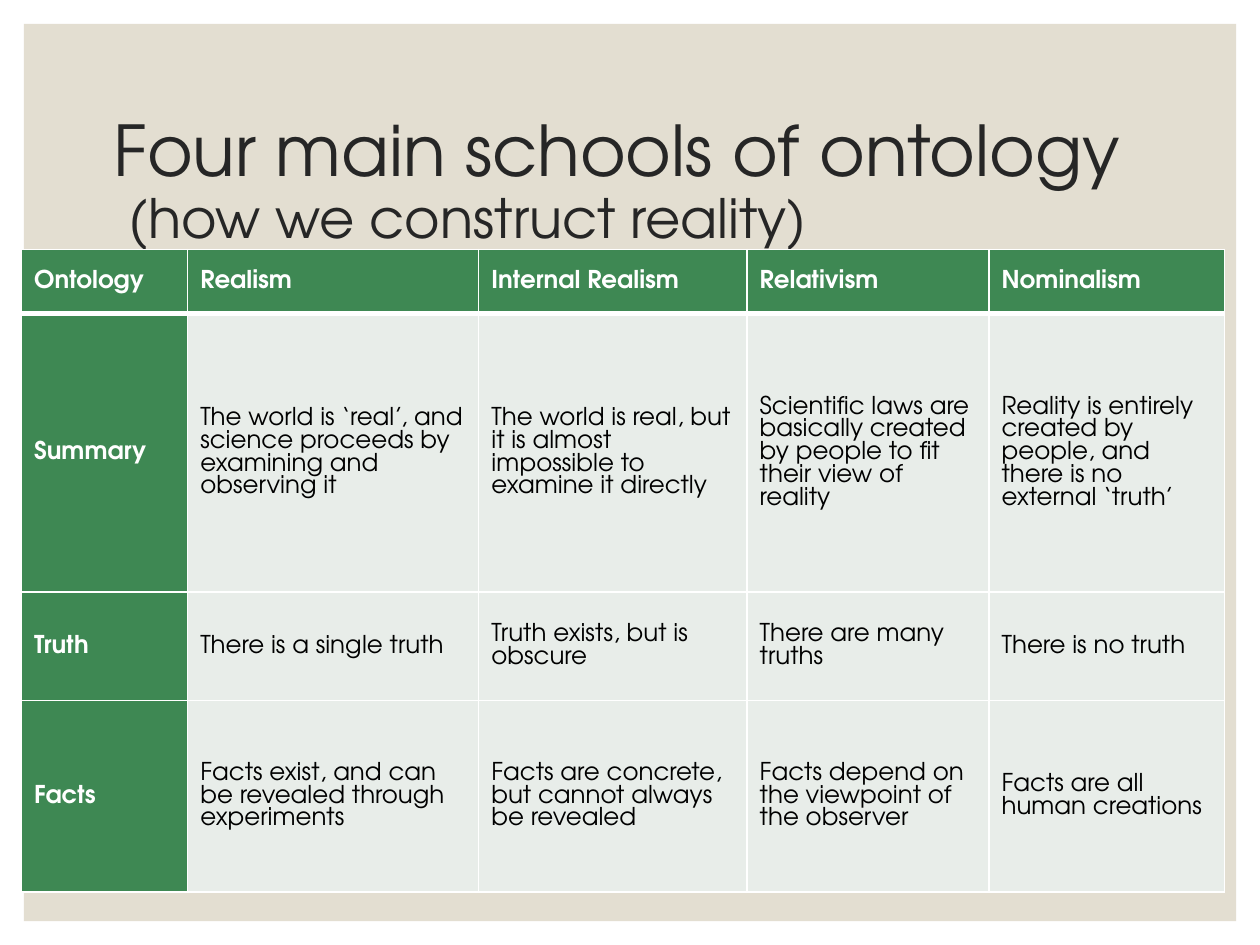
from lxml import etree
from pptx import Presentation
from pptx.dml.color import RGBColor
from pptx.enum.shapes import MSO_SHAPE
from pptx.enum.text import MSO_ANCHOR
from pptx.oxml.ns import qn
from pptx.util import Inches, Pt

FONT = "TeX Gyre Adventor"
WHITE = RGBColor(0xFF, 0xFF, 0xFF)
BLACK = RGBColor(0x00, 0x00, 0x00)
CHARCOAL = RGBColor(0x26, 0x26, 0x26)
SAND = RGBColor(0xE3, 0xDE, 0xD1)
GREEN = RGBColor(0x3E, 0x88, 0x53)
PALE_GREEN = RGBColor(0xE8, 0xED, 0xE9)

COLUMN_WIDTHS = [1.32, 2.31, 2.13, 1.92, 1.87]
ROW_HEIGHTS = [0.51, 2.21, 0.86, 1.52]
SCHOOLS = [
    ["Ontology", "Realism", "Internal Realism", "Relativism", "Nominalism"],
    ["Summary",
     "The world is ‘real’, and science proceeds by examining and observing it",
     "The world is real, but it is almost impossible to examine it directly",
     "Scientific laws are basically created by people to fit their view of reality",
     "Reality is entirely created by people, and there is no external ‘truth’"],
    ["Truth", "There is a single truth", "Truth exists, but is obscure",
     "There are many truths", "There is no truth"],
    ["Facts",
     "Facts exist, and can be revealed through experiments",
     "Facts are concrete, but cannot always be revealed",
     "Facts depend on the viewpoint of the observer",
     "Facts are all human creations"],
]


def add_text(paragraph, text, *, size, color, bold=False, spacing=None):
    run = paragraph.add_run()
    run.text = text
    run.font.name = FONT
    run.font.size = Pt(size)
    run.font.bold = bold
    run.font.color.rgb = color
    if spacing is not None:
        paragraph.line_spacing = spacing


def set_borders(cell, widths):
    """Draw white cell borders; widths maps side letters to points."""
    properties = cell._tc.get_or_add_tcPr()
    for position, (side, width) in enumerate(widths.items()):
        line = etree.Element(qn(f"a:ln{side}"), w=str(Pt(width)))
        fill = etree.SubElement(line, qn("a:solidFill"))
        etree.SubElement(fill, qn("a:srgbClr"), val=str(WHITE))
        properties.insert(position, line)


class SlideBuilder:
    def __init__(self, slide):
        self.slide = slide

    def panel(self, left, top, width, height, color):
        panel = self.slide.shapes.add_shape(
            MSO_SHAPE.RECTANGLE, Inches(left), Inches(top), Inches(width), Inches(height))
        panel.shadow.inherit = False
        panel.fill.solid()
        panel.fill.fore_color.rgb = color
        panel.line.fill.background()

    def title(self, left, top, width, height, heading, subheading):
        frame = self.slide.shapes.add_textbox(
            Inches(left), Inches(top), Inches(width), Inches(height)).text_frame
        frame.word_wrap = True
        frame.vertical_anchor = MSO_ANCHOR.MIDDLE
        paragraph = frame.paragraphs[0]
        add_text(paragraph, heading, size=40, color=CHARCOAL, spacing=0.9)
        paragraph.add_line_break()
        add_text(paragraph, subheading, size=31, color=CHARCOAL)

    def table(self, left, top, column_widths, row_heights, rows):
        table = self.slide.shapes.add_table(
            len(rows), len(column_widths), Inches(left), Inches(top),
            Inches(sum(column_widths)), Inches(sum(row_heights))).table
        for column, width in zip(table.columns, column_widths):
            column.width = Inches(width)
        for row, height in zip(table.rows, row_heights):
            row.height = Inches(height)
        for r, texts in enumerate(rows):
            for c, text in enumerate(texts):
                self.cell(table.cell(r, c), text, is_label=r == 0 or c == 0,
                          top=3 if r == 1 else 1, bottom=3 if r == 0 else 1)

    def cell(self, cell, text, is_label, top, bottom):
        cell.vertical_anchor = MSO_ANCHOR.MIDDLE
        cell.fill.solid()
        cell.fill.fore_color.rgb = GREEN if is_label else PALE_GREEN
        set_borders(cell, {"L": 1, "R": 1, "T": top, "B": bottom})
        add_text(cell.text_frame.paragraphs[0], text, size=14, bold=is_label,
                 color=WHITE if is_label else BLACK, spacing=Pt(13))


def main():
    deck = Presentation()
    deck.slide_width, deck.slide_height = Inches(10), Inches(7.5)
    builder = SlideBuilder(deck.slides.add_slide(deck.slide_layouts[6]))
    builder.panel(0.19, 0.19, 9.62, 7.12, SAND)
    builder.title(0.8, 0.7, 8.4, 1.5,
                  "Four main schools of ontology", " (how we construct reality)")
    builder.table(0.17, 1.98, COLUMN_WIDTHS, ROW_HEIGHTS, SCHOOLS)
    deck.save("out.pptx")


if __name__ == "__main__":
    main()
